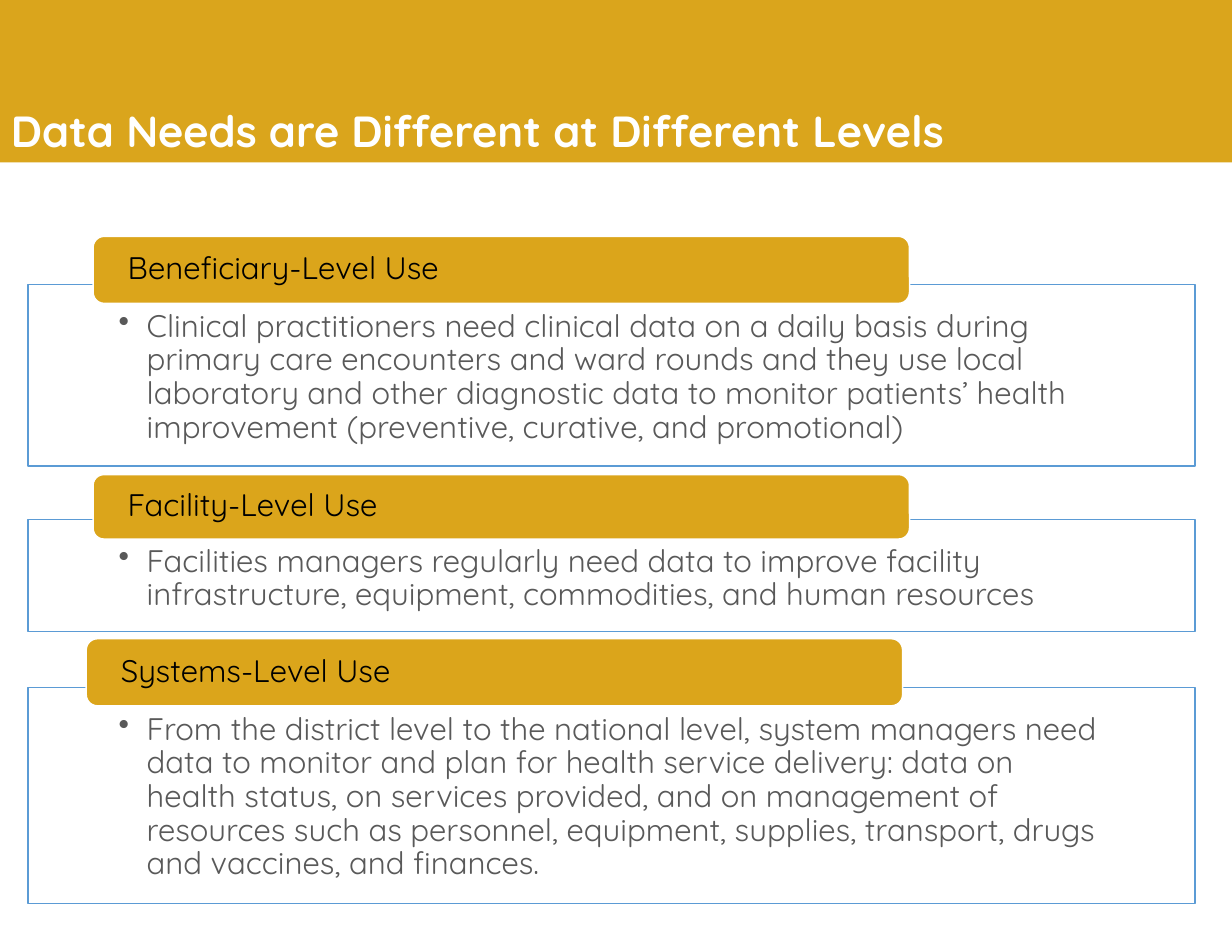
from lxml import etree
from pptx import Presentation
from pptx.dml.color import RGBColor
from pptx.enum.shapes import MSO_SHAPE
from pptx.enum.text import MSO_ANCHOR, PP_ALIGN
from pptx.oxml.ns import qn
from pptx.util import Pt

RECT = MSO_SHAPE.RECTANGLE
ROUND = MSO_SHAPE.ROUNDED_RECTANGLE
TOP = MSO_ANCHOR.TOP
MIDDLE = MSO_ANCHOR.MIDDLE
LEFT = PP_ALIGN.LEFT

GOLD = RGBColor(0xDA, 0xA5, 0x1C)
AMBER = RGBColor(0xDB, 0xA5, 0x1B)
BLUE = RGBColor(0x5B, 0x9B, 0xD5)
WHITE = RGBColor(0xFF, 0xFF, 0xFF)
BLACK = RGBColor(0, 0, 0)
GREY = RGBColor(0x59, 0x59, 0x59)

FONT = "Quicksand"
WIDE, HIGH = 792, 612

LEVELS = [
    ("Beneficiary-Level Use", (59.8, 151.9, 524.9, 43.2), (182.9, 116.6),
     "Clinical practitioners need clinical data on a daily basis during "
     "primary care encounters and ward rounds and they use local "
     "laboratory and other diagnostic data to monitor patients’ health "
     "improvement (preventive, curative, and promotional)"),
    ("Facility-Level Use", (59.8, 305.1, 524.9, 41.5), (334.1, 72),
     "Facilities managers regularly need data to improve facility "
     "infrastructure, equipment, commodities, and human resources"),
    ("Systems-Level Use", (55.4, 410.6, 524.9, 43.2), (442, 139),
     "From the district level to the national level, system managers need "
     "data to monitor and plan for health service delivery: data on "
     "health status, on services provided, and on management of "
     "resources such as personnel, equipment, supplies, transport, drugs "
     "and vaccines, and finances."),
]


def add_box(slide, kind, area, fill, line=None):
    box = slide.shapes.add_shape(kind, *map(Pt, area))
    box.shadow.inherit = False
    box.fill.solid()
    box.fill.fore_color.rgb = fill
    if line is None:
        box.line.fill.background()
    else:
        box.line.color.rgb = line
        box.line.width = Pt(1)
    return box


def add_bullet(para):
    props = para._p.get_or_add_pPr()
    props.set("marL", str(Pt(18)))
    props.set("indent", str(-Pt(18)))
    mark = etree.SubElement(props, qn("a:buChar"))
    mark.set("char", "•")


def write(shape, text, size=20, color=BLACK, bold=False, anchor=MIDDLE,
          insets=(7.2, 3.6, 7.2, 3.6), bullet=False):
    frame = shape.text_frame
    frame.word_wrap = True
    frame.vertical_anchor = anchor
    (frame.margin_left, frame.margin_top,
     frame.margin_right, frame.margin_bottom) = map(Pt, insets)
    para = frame.paragraphs[0]
    para.alignment = LEFT
    para.line_spacing = 0.9
    if bullet:
        add_bullet(para)
    run = para.add_run()
    run.text = text
    run.font.name = FONT
    run.font.size = Pt(size)
    run.font.bold = bold
    run.font.color.rgb = color


def add_title(slide, text):
    add_box(slide, RECT, (0, 0, WIDE, 104.4), GOLD)
    title = slide.shapes.add_textbox(Pt(0), Pt(64), Pt(745), Pt(44))
    write(title, text, size=28, color=WHITE, bold=True)


def add_level(slide, name, area, span, text):
    top, height = span
    body = add_box(slide, RECT, (18, top, 750.2, height), WHITE, BLUE)
    write(body, text, color=GREY, anchor=TOP,
          insets=(58.3, 16.6, 58.3, 11.5), bullet=True)
    label = add_box(slide, ROUND, area, AMBER, WHITE)
    write(label, name, insets=(20.2, 0, 20.2, 0))


def main():
    deck = Presentation()
    deck.slide_width, deck.slide_height = Pt(WIDE), Pt(HIGH)
    slide = deck.slides.add_slide(deck.slide_layouts[6])
    add_title(slide, "Data Needs are Different at Different Levels")
    for level in LEVELS:
        add_level(slide, *level)
    deck.save("out.pptx")


if __name__ == "__main__":
    main()
